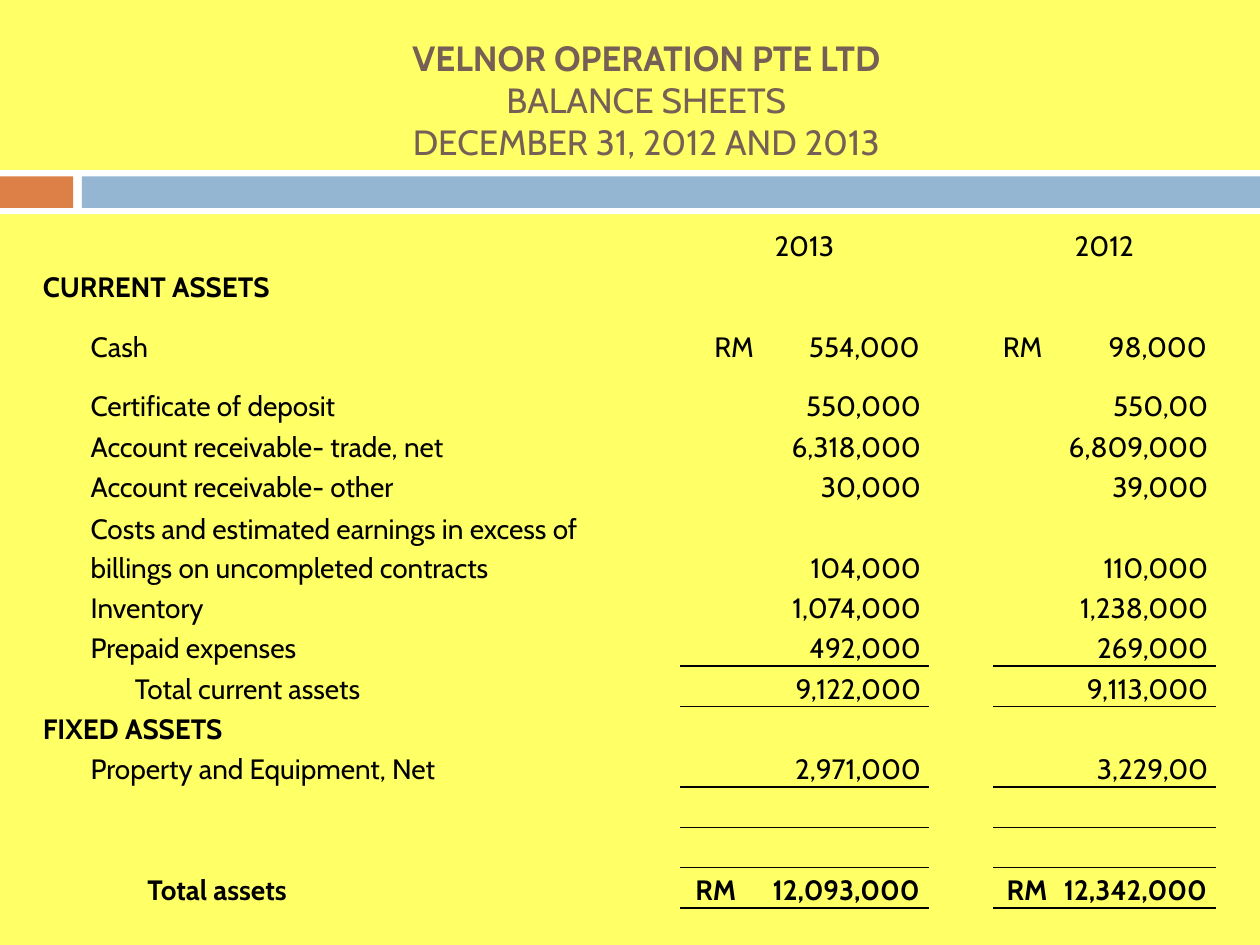
from lxml import etree
from pptx import Presentation
from pptx import util as u
from pptx.dml.color import RGBColor
from pptx.enum import shapes, text
from pptx.oxml import ns

COLORS = {
    "background": "FFFF66",
    "band": "FFFFFF",
    "accent": "DD8047",
    "bar": "94B6D2",
    "title": "775F55",
    "ink": "000000",
}
FONT = "Cabin"
PLAIN_TABLE_STYLE = "{2D5ABB26-0587-4C30-8999-92F81FD0307C}"
LEFT, CENTER, RIGHT = text.PP_ALIGN.LEFT, text.PP_ALIGN.CENTER, text.PP_ALIGN.RIGHT
MIDDLE, BOTTOM = text.MSO_ANCHOR.MIDDLE, text.MSO_ANCHOR.BOTTOM

BARS = [
    ("band", 0, 1.35, 10, 0.35),
    ("accent", 0, 1.4, 0.58, 0.25),
    ("bar", 0.65, 1.4, 9.35, 0.25),
]
COLUMN_WIDTHS = [0.38, 4.09, 0.65, 1.97, 0.51, 1.77]
YEAR_COLUMNS = (3, 5)
ROW_HEIGHT = 0.32
TALL_ROWS = {2: 0.63, 6: 0.64}
BOTTOM_ROWS = (6, 9, 10)
RULED_ROWS = (8, 9, 11, 12, 13, 14)
BOLD_ROWS = (14,)
LABEL_INDENTS = {9: 0.35, 14: 0.45}
CURRENCY_STOPS = {(2, 3): 0.21, (2, 5): 0.02, (14, 3): 0.06, (14, 5): 0.05}
BALANCES = [
    ("", "2013", "2012"),
    ("CURRENT ASSETS",),
    ("Cash", "554,000", "98,000"),
    ("Certificate of deposit", "550,000", "550,00"),
    ("Account receivable- trade, net", "6,318,000", "6,809,000"),
    ("Account receivable- other", "30,000", "39,000"),
    ("Costs and estimated earnings in excess of billings on uncompleted contracts",
     "104,000", "110,000"),
    ("Inventory", "1,074,000", "1,238,000"),
    ("Prepaid expenses", "492,000", "269,000"),
    ("Total current assets", "9,122,000", "9,113,000"),
    ("FIXED ASSETS",),
    ("Property and Equipment, Net", "2,971,000", "3,229,00"),
    (),
    (),
    ("Total assets", "12,093,000", "12,342,000"),
]


def color(name):
    return RGBColor.from_string(COLORS[name])


def write(paragraph, words, size=16, ink="ink", bold=False, align=LEFT, spacing=None):
    paragraph.alignment = align
    if spacing:
        paragraph.line_spacing = spacing
    run = paragraph.add_run()
    run.text = words
    run.font.name = FONT
    run.font.size = u.Pt(size)
    run.font.bold = bold
    run.font.color.rgb = color(ink)


def add_bar(slide, fill, left, top, width, height):
    bar = slide.shapes.add_shape(
        shapes.MSO_SHAPE.RECTANGLE, *map(u.Inches, (left, top, width, height)))
    bar.shadow.inherit = False
    bar.fill.solid()
    bar.fill.fore_color.rgb = color(fill)
    bar.line.fill.background()


def add_title(slide):
    title = slide.shapes.title
    title.left, title.top, title.width, title.height = map(
        u.Inches, (0.67, 0.25, 8.92, 1.08))
    title.text_frame.vertical_anchor = MIDDLE
    paragraph = title.text_frame.paragraphs[0]
    style = {"size": 20, "ink": "title", "align": CENTER}
    write(paragraph, "VELNOR OPERATION PTE LTD", bold=True, **style)
    for line in ("BALANCE SHEETS", "DECEMBER 31, 2012 AND 2013"):
        paragraph.add_line_break()
        write(paragraph, line, **style)


def add_rule(cell):
    properties = cell._tc.get_or_add_tcPr()
    line = etree.Element(ns.qn("a:lnB"), w=str(u.Pt(1)))
    fill = etree.SubElement(line, ns.qn("a:solidFill"))
    etree.SubElement(fill, ns.qn("a:srgbClr"), val=COLORS["ink"])
    properties.insert(0, line)


def add_tab_stops(paragraph, stops):
    tabs = etree.SubElement(paragraph._p.get_or_add_pPr(), ns.qn("a:tabLst"))
    for position, align in stops:
        etree.SubElement(tabs, ns.qn("a:tab"), pos=str(u.Inches(position)), algn=align)


def indent(paragraph, distance):
    paragraph._p.get_or_add_pPr().set("marL", str(u.Inches(distance)))


def fill_label(table, row, label):
    is_heading = label.isupper()
    cell = table.cell(row, 0 if is_heading else 1)
    paragraph = cell.text_frame.paragraphs[0]
    write(paragraph, label, bold=is_heading or row in BOLD_ROWS, spacing=1.15)
    if row in LABEL_INDENTS:
        indent(paragraph, LABEL_INDENTS[row])


def fill_amount(table, row, column, amount):
    paragraph = table.cell(row, column).text_frame.paragraphs[0]
    bold = row in BOLD_ROWS
    stop = CURRENCY_STOPS.get((row, column))
    if stop is None:
        align = CENTER if row == 0 else RIGHT
        write(paragraph, amount, align=align, spacing=1.15)
    else:
        write(paragraph, f"\tRM\t{amount}", bold=bold, spacing=1.15)
        right_edge = COLUMN_WIDTHS[column] - 0.13
        add_tab_stops(paragraph, [(stop, "l"), (right_edge, "r")])


def format_cell(cell, row, column):
    cell.fill.background()
    cell.margin_left = cell.margin_right = u.Inches(0.06)
    cell.margin_top = cell.margin_bottom = 0
    cell.vertical_anchor = BOTTOM if row in BOTTOM_ROWS else MIDDLE
    if row in RULED_ROWS and column in YEAR_COLUMNS:
        add_rule(cell)


def add_balance_table(slide):
    heights = [TALL_ROWS.get(row, ROW_HEIGHT) for row in range(len(BALANCES))]
    frame = slide.shapes.add_table(
        len(heights), len(COLUMN_WIDTHS), u.Inches(0.28), u.Inches(1.78),
        u.Inches(sum(COLUMN_WIDTHS)), u.Inches(sum(heights)))
    table = frame.table
    table.first_row = table.horz_banding = False
    next(frame.element.iter(ns.qn("a:tableStyleId"))).text = PLAIN_TABLE_STYLE
    for column, width in zip(table.columns, COLUMN_WIDTHS):
        column.width = u.Inches(width)
    for row, balance in enumerate(BALANCES):
        table.rows[row].height = u.Inches(heights[row])
        for column in range(len(COLUMN_WIDTHS)):
            format_cell(table.cell(row, column), row, column)
        if row == 0 or len(balance) == 1:
            table.cell(row, 0).merge(table.cell(row, 1))
        if balance and balance[0]:
            fill_label(table, row, balance[0])
        for column, amount in zip(YEAR_COLUMNS, balance[1:]):
            fill_amount(table, row, column, amount)


def main():
    presentation = Presentation()
    presentation.slide_width = u.Inches(10)
    presentation.slide_height = u.Inches(7.5)
    slide = presentation.slides.add_slide(presentation.slide_layouts[5])
    slide.background.fill.solid()
    slide.background.fill.fore_color.rgb = color("background")
    for bar in BARS:
        add_bar(slide, *bar)
    add_title(slide)
    add_balance_table(slide)
    presentation.save("out.pptx")


if __name__ == "__main__":
    main()
